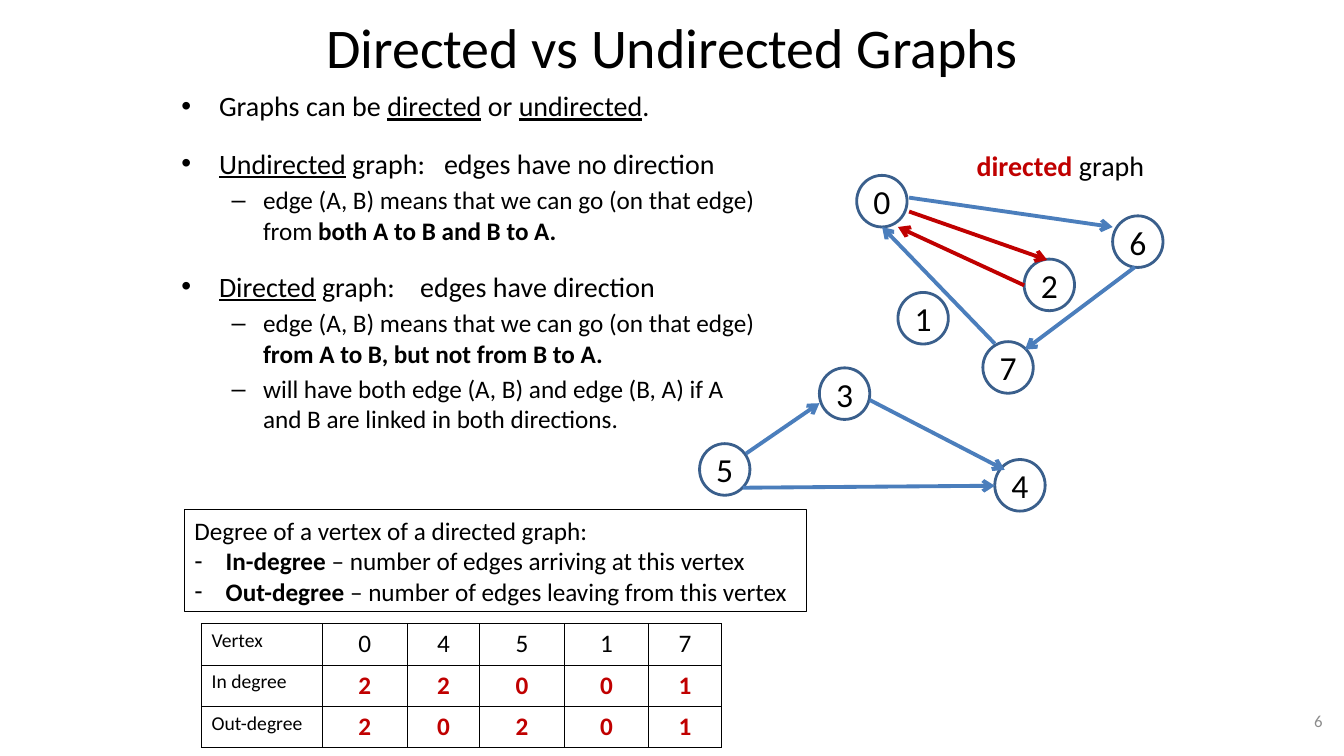
"""Build a slide that compares directed and undirected graphs."""
from lxml.etree import SubElement
from pptx import Presentation
from pptx.dml.color import RGBColor
from pptx.enum.shapes import MSO_CONNECTOR as Link, MSO_SHAPE as Form
from pptx.enum.text import MSO_ANCHOR as Anchor, PP_ALIGN as Align
from pptx.oxml.ns import qn
from pptx.util import Cm, Pt

FONT = "Calibri"
BLACK = RGBColor(0x00, 0x00, 0x00)
GRAY = RGBColor(0x8C, 0x8C, 0x8C)
RED = RGBColor(0xC0, 0x00, 0x00)
BLUE = RGBColor(0x4B, 0x7E, 0xBC)
NAVY = RGBColor(0x3A, 0x5F, 0x8C)

NODE_W, NODE_H = 1.27, 1.3
NODES = {
    "0": (21.59, 4.42), "1": (22.63, 7.37), "7": (24.77, 8.61), "2": (25.81, 6.53),
    "5": (17.63, 11.18), "3": (20.65, 9.27), "4": (25.07, 11.58), "6": (28.04, 5.44),
}
EDGES = [
    (18.8, 11.43, 20.65, 10.16, BLUE),
    (21.92, 10.08, 25.32, 11.84, BLUE),
    (18.72, 12.29, 25.07, 12.24, BLUE),
    (22.91, 4.98, 28.04, 5.72, BLUE),
    (28.6, 6.73, 25.83, 8.81, BLUE),
    (25.07, 8.66, 22.23, 5.72, BLUE),
    (25.81, 7.19, 22.63, 5.72, RED),
    (22.91, 5.33, 26.39, 6.55, RED),
]
TOP = dict(size=20, mark="•", left=0.95, hang=0.95)
SUB = dict(size=18, mark="–", left=2.06, hang=0.79, before=3.6)
DASH = dict(size=18, mark="-", left=0.79, hang=0.79)
POINTS = [
    (["Graphs can be ", ("directed", "u"), " or ", ("undirected", "u"), "."], TOP, 0),
    ([("Undirected", "u"), " graph:", (" ", 900), "edges have no direction"], TOP, 17),
    (["edge (A, B) means that we can go (on that edge) from ",
      ("both A to B and B to A.", "b")], SUB, 3.6),
    ([("Directed", "u"), " graph:", (" ", 1350), "edges have direction"], TOP, 17),
    (["edge (A, B) means that we can go (on that edge) ",
      ("from A to B, but not from B to A.", "b")], SUB, 3.6),
    (["will have both edge (A, B) and edge (B, A) if "
      "A and B are linked in both directions."], SUB, 3.6),
]
DEGREES = [
    (["Degree of a vertex of a directed graph:"], dict(size=18)),
    ([("In-degree", "b"), " – number of edges arriving at this vertex"], DASH),
    ([("Out-degree", "b"), " – number of edges leaving from this vertex"], DASH),
]
COLS = [3.05, 2.13, 1.83, 2.13, 2.13, 1.83]
ROW_H = 1.04
ROWS = [
    ["Vertex", "0", "4", "5", "1", "7"],
    ["In degree", "2", "2", "0", "0", "1"],
    ["Out-degree", "2", "0", "2", "0", "1"],
]


def style(run, size, color=BLACK, bold=False):
    """Set the font of one run."""
    font = run.font
    font.name, font.size, font.bold = FONT, Pt(size), bold
    font.color.rgb = color


def put(para, text, size, color=BLACK, align=Align.LEFT, bold=False):
    """Fill a paragraph with text of one style."""
    para.text = text
    para.alignment = align
    style(para.runs[0], size, color, bold)


def fill(para, parts, size, mark=None, left=0, hang=0, before=0):
    """Fill a paragraph with mixed runs and an optional bullet."""
    para.alignment = Align.LEFT
    para.space_before = Pt(before)
    for part in parts:
        text, kind = (part, "") if isinstance(part, str) else part
        run = para.add_run()
        run.text = text
        style(run, size, bold=kind == "b")
        run.font.underline = kind == "u"
        if isinstance(kind, int):
            run.font._element.set("spc", str(kind))
    if mark:
        props = para._p.get_or_add_pPr()
        props.set("marL", str(Cm(left)))
        props.set("indent", str(-Cm(hang)))
        SubElement(props, qn("a:buFont"), typeface="Arial")
        SubElement(props, qn("a:buChar"), char=mark)


def add_box(slide, x, y, w, h, anchor=Anchor.TOP, wrap=True):
    """Add a text box and return its frame."""
    frame = slide.shapes.add_textbox(Cm(x), Cm(y), Cm(w), Cm(h)).text_frame
    frame.word_wrap = wrap
    frame.vertical_anchor = anchor
    return frame


def add_form(slide, form, x, y, w, h, color, width):
    """Add an unfilled outlined shape and return its frame."""
    shape = slide.shapes.add_shape(form, Cm(x), Cm(y), Cm(w), Cm(h))
    shape.shadow.inherit = False
    shape.fill.background()
    shape.line.color.rgb = color
    shape.line.width = Pt(width)
    return shape.text_frame


def add_node(slide, name, x, y):
    """Add a numbered vertex."""
    frame = add_form(slide, Form.OVAL, x, y, NODE_W, NODE_H, NAVY, 2)
    frame.margin_left = frame.margin_right = Cm(0)
    frame.margin_top = frame.margin_bottom = Cm(0)
    frame.word_wrap = False
    put(frame.paragraphs[0], name, 24, align=Align.CENTER)


def add_edge(slide, x1, y1, x2, y2, color):
    """Add an arrow between two points."""
    edge = slide.shapes.add_connector(Link.STRAIGHT, Cm(x1), Cm(y1), Cm(x2), Cm(y2))
    edge.line.color.rgb = color
    edge.line.width = Pt(2.75)
    SubElement(edge.line._get_or_add_ln(), qn("a:tailEnd"), type="arrow")
    SubElement(edge._element.spPr, qn("a:effectLst"))


def frame_cell(cell):
    """Give a cell black borders and no fill."""
    props = cell._tc.get_or_add_tcPr()
    for side in ("lnL", "lnR", "lnT", "lnB"):
        line = SubElement(props, qn("a:" + side), w=str(Pt(1)))
        solid = SubElement(line, qn("a:solidFill"))
        SubElement(solid, qn("a:srgbClr"), val=str(BLACK))
    cell.fill.background()


def add_grid(slide, x, y):
    """Add the table of vertex degrees."""
    table = slide.shapes.add_table(len(ROWS), len(COLS), Cm(x), Cm(y),
                                   Cm(sum(COLS)), Cm(ROW_H * len(ROWS))).table
    table.first_row = table.horz_banding = False
    for col, width in zip(table.columns, COLS):
        col.width = Cm(width)
    for r, row in enumerate(ROWS):
        table.rows[r].height = Cm(ROW_H)
        for c, text in enumerate(row):
            cell = table.cell(r, c)
            frame_cell(cell)
            para = cell.text_frame.paragraphs[0]
            if c == 0:
                put(para, text, 14)
            else:
                put(para, text, 18, RED if r else BLACK, Align.CENTER, r > 0)


def add_list(frame, items):
    """Write each item as a paragraph of the frame."""
    for i, (parts, look) in enumerate(items):
        para = frame.add_paragraph() if i else frame.paragraphs[0]
        fill(para, parts, **look)


def main():
    """Build and save the slide."""
    deck = Presentation()
    deck.slide_width, deck.slide_height = Cm(33.87), Cm(19.05)
    slide = deck.slides.add_slide(deck.slide_layouts[6])

    title = add_box(slide, 5.51, 0.2, 22.86, 1.9, Anchor.MIDDLE)
    put(title.paragraphs[0], "Directed vs Undirected Graphs", 40, align=Align.CENTER)
    body = add_box(slide, 4.32, 2.11, 14.96, 9.32)
    add_list(body, [(parts, {**look, "before": gap}) for parts, look, gap in POINTS])
    page = add_box(slide, 25.68, 17.65, 7.9, 1.02, Anchor.MIDDLE)
    put(page.paragraphs[0], "6", 12, GRAY, Align.RIGHT)

    for name, spot in NODES.items():
        add_node(slide, name, *spot)
    for edge in EDGES:
        add_edge(slide, *edge)
    label = add_box(slide, 24.36, 3.61, 4.75, 1.12, wrap=False).paragraphs[0]
    fill(label, [("directed", "b"), " graph"], 20)
    label.runs[0].font.color.rgb = RED

    add_list(add_form(slide, Form.RECTANGLE, 4.65, 12.85, 15.67, 2.57, BLACK, 0.75), DEGREES)
    add_grid(slide, 5.08, 15.72)
    deck.save("out.pptx")


if __name__ == "__main__":
    main()
